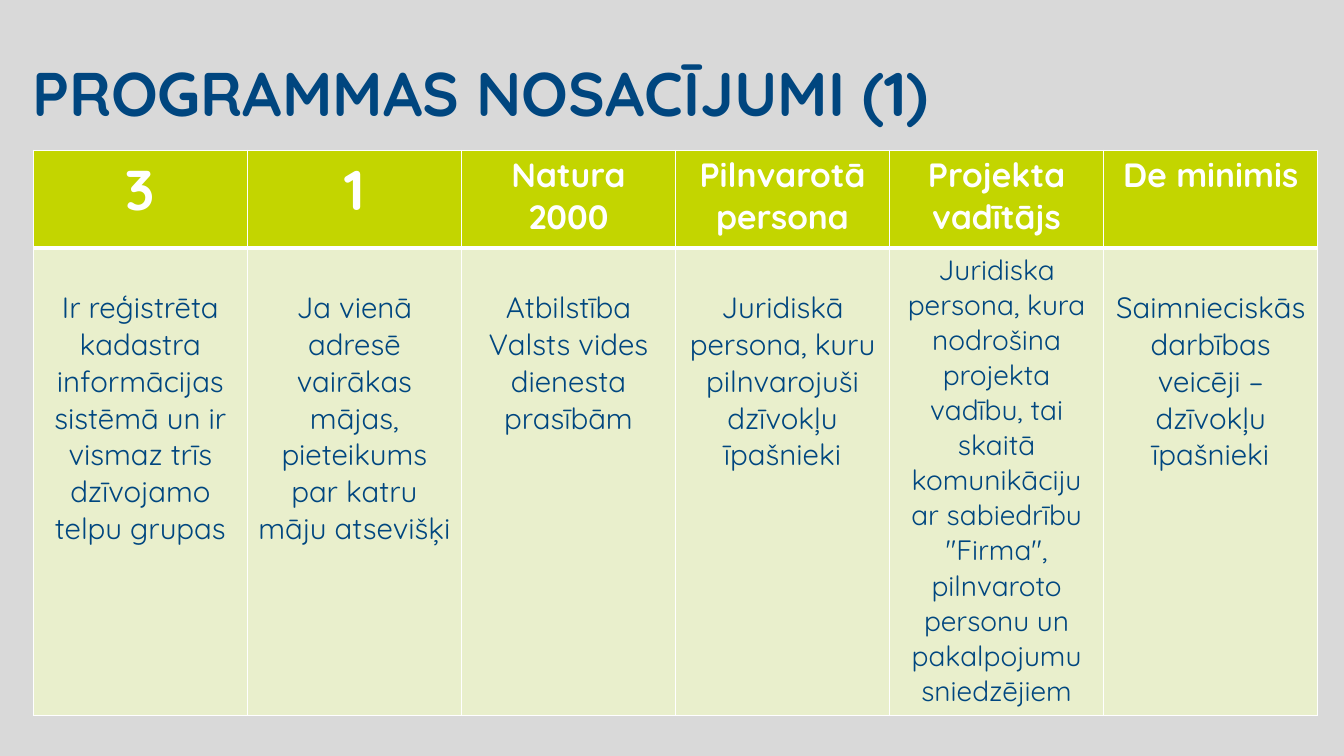
import pptx
import pptx.dml.color
import pptx.enum.text
import pptx.oxml
import pptx.oxml.ns
import pptx.util

Inches = pptx.util.Inches
Pt = pptx.util.Pt
RGBColor = pptx.dml.color.RGBColor

BACKGROUND = RGBColor(0xD9, 0xD9, 0xD9)
NAVY = RGBColor(0x00, 0x46, 0x7F)
LIME = RGBColor(0xC3, 0xD5, 0x00)
PALE_LIME = RGBColor(0xE9, 0xEF, 0xCC)
WHITE = RGBColor(0xFF, 0xFF, 0xFF)
FONT = "Quicksand"

# Heading, heading size, condition, condition size, condition top margin
CONDITIONS = [
    ("3", 40, "Ir reģistrēta kadastra informācijas sistēmā un ir vismaz trīs "
     "dzīvojamo telpu grupas", 21, 0.41),
    ("1", 40, "Ja vienā adresē vairākas mājas, pieteikums par katru māju atsevišķi",
     21, 0.41),
    ("Natura 2000", 24, "Atbilstība Valsts vides dienesta prasībām", 21, 0.41),
    ("Pilnvarotā persona", 24, "Juridiskā persona, kuru pilnvarojuši dzīvokļu īpašnieki",
     21, 0.41),
    ("Projekta vadītājs", 24, "Juridiska persona, kura nodrošina projekta vadību, tai "
     "skaitā komunikāciju ar sabiedrību \"Firma\", pilnvaroto personu un "
     "pakalpojumu sniedzējiem", 20, 0.04),
    ("De minimis", 24, "Saimnieciskās darbības veicēji – dzīvokļu īpašnieki", 21, 0.41),
]


def write_text(paragraph, text, size, color, bold):
    run = paragraph.add_run()
    run.text = text
    font_format = {"name": FONT, "size": Pt(size), "bold": bold}
    for attribute, value in font_format.items():
        setattr(run.font, attribute, value)
    run.font.color.rgb = color


def add_borders(cell, widths):
    properties = cell._tc.get_or_add_tcPr()
    for side, width in widths.items():
        properties.append(pptx.oxml.parse_xml(
            f'<a:ln{side} {pptx.oxml.ns.nsdecls("a")} w="{Pt(width)}">'
            f'<a:solidFill><a:srgbClr val="{WHITE}"/></a:solidFill></a:ln{side}>'))


presentation = pptx.Presentation()
presentation.slide_width = Inches(13.33)
presentation.slide_height = Inches(7.5)
slide = presentation.slides.add_slide(presentation.slide_layouts[6])
slide.background.fill.solid()
slide.background.fill.fore_color.rgb = BACKGROUND

# Title
title = slide.shapes.add_textbox(Inches(0.22), Inches(0.5), Inches(11.45), Inches(0.84))
title.text_frame.word_wrap = True
write_text(title.text_frame.paragraphs[0], "PROGRAMMAS NOSACĪJUMI (1)", 44, NAVY, True)

# Table of programme conditions
conditions = slide.shapes.add_table(
    2, len(CONDITIONS), Inches(0.33), Inches(1.49), Inches(12.74), Inches(5.61)).table
for row, height in zip(conditions.rows, (0.97, 4.64)):
    row.height = Inches(height)

for column, (heading, heading_size, condition, condition_size, top) in enumerate(CONDITIONS):
    rows = [
        (heading, heading_size, WHITE, True, LIME, 0.04, {"L": 1, "R": 1, "T": 1, "B": 3}),
        (condition, condition_size, NAVY, False, PALE_LIME, top,
         {"L": 1, "R": 1, "T": 3, "B": 1}),
    ]
    for row, (text, size, color, bold, fill, margin_top, borders) in enumerate(rows):
        cell = conditions.cell(row, column)
        cell_format = {
            "margin_left": Inches(0.09), "margin_right": Inches(0.09),
            "margin_top": Inches(margin_top), "margin_bottom": Inches(0.04),
            "vertical_anchor": pptx.enum.text.MSO_ANCHOR.TOP,
        }
        for attribute, value in cell_format.items():
            setattr(cell, attribute, value)
        add_borders(cell, borders)
        cell.fill.solid()
        cell.fill.fore_color.rgb = fill
        paragraph = cell.text_frame.paragraphs[0]
        paragraph.alignment = pptx.enum.text.PP_ALIGN.CENTER
        write_text(paragraph, text, size, color, bold)

presentation.save("out.pptx")
